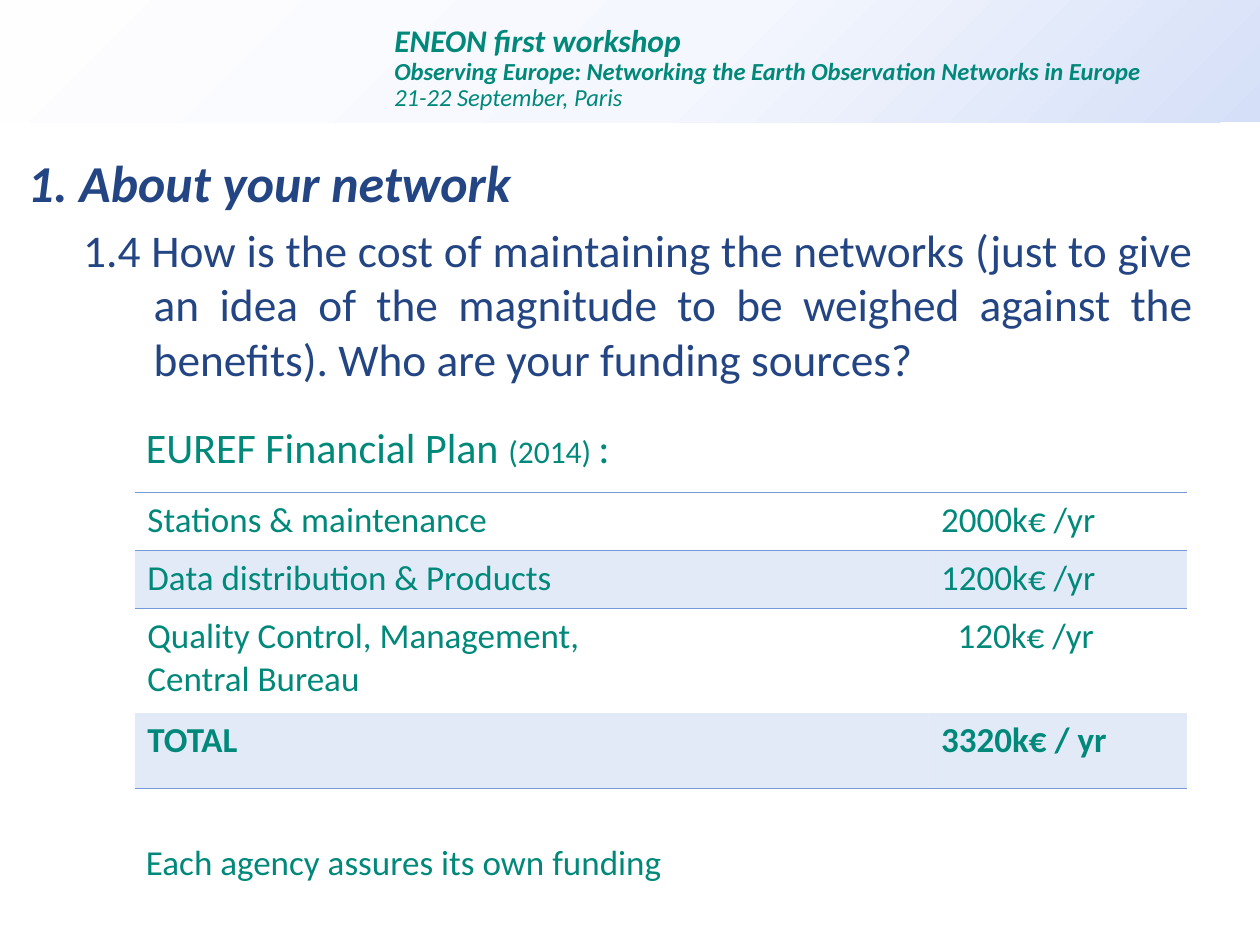
from dataclasses import dataclass

from lxml.etree import SubElement
from pptx import Presentation
from pptx.dml.color import RGBColor
from pptx.enum.shapes import MSO_SHAPE
from pptx.enum.text import MSO_ANCHOR, MSO_AUTO_SIZE, PP_ALIGN
from pptx.oxml import parse_xml
from pptx.oxml.ns import nsdecls, qn
from pptx.util import Inches, Pt

GREEN, NAVY, BLUE = "00897A", "244583", "7598D9"
NO_STYLE = "{2D5ABB26-0587-4C30-8999-92F81FD0307C}"
HEADER_STOPS = [(0, "FEFEFF"), (55, "F4F7FD"), (100, "D5DFF8")]


@dataclass
class Line:
    text: str
    size: float
    bold: bool = False
    italic: bool = False


@dataclass
class CostRow:
    label: str
    cost: str
    height: float
    banded: bool = False
    bold: bool = False
    indent: float = 0
    edges: tuple = ()


HEADER = [
    Line("ENEON first workshop", 18, True, True),
    Line("Observing Europe: Networking the Earth Observation Networks in Europe", 14, True, True),
    Line("21-22 September, Paris", 14, False, True),
]
QUESTION = [
    Line("1. About your network", 29.6, True, True),
    Line("1.4 How is the cost of maintaining the networks (just to give an idea of the "
         "magnitude to be weighed against the benefits). Who are your funding sources?", 25.9),
]
COSTS = [
    CostRow("Stations & maintenance", "2000k€ /yr", 0.46, edges=("lnT", "lnB")),
    CostRow("Data distribution & Products", "1200k€ /yr", 0.46, banded=True, edges=("lnT",)),
    CostRow("Quality Control, Management,\nCentral Bureau", "120k€ /yr", 0.83, indent=0.13),
    CostRow("TOTAL", "3320k€ / yr", 0.6, banded=True, bold=True, edges=("lnB",)),
]


def color(value: str) -> RGBColor:
    return RGBColor.from_string(value)


def style(font, size: float, value: str, bold: bool = False, italic: bool = False) -> None:
    font.name, font.size = "Calibri", Pt(size)
    font.bold, font.italic = bold, italic
    font.color.rgb = color(value)


def write_lines(frame, lines: list, value: str) -> list:
    frame.text = "\n".join(line.text for line in lines)
    for para, line in zip(frame.paragraphs, lines):
        style(para.font, line.size, value, line.bold, line.italic)
    return list(frame.paragraphs)


def add_header(page) -> None:
    band = page.shapes.add_shape(MSO_SHAPE.RECTANGLE, 0, 0, Inches(10), Inches(0.97))
    band.shadow.inherit = False
    band.line.fill.background()
    stops = "".join(f'<a:gs pos="{place * 1000}"><a:srgbClr val="{value}"/></a:gs>'
                    for place, value in HEADER_STOPS)
    gradient = parse_xml(
        f'<a:gradFill {nsdecls("a")} rotWithShape="1"><a:gsLst>{stops}</a:gsLst>'
        '<a:path path="circle"><a:fillToRect l="-40000" t="-90000" r="140000" b="190000"/>'
        '</a:path></a:gradFill>')
    band.element.spPr.find(qn("a:prstGeom")).addnext(gradient)
    frame = band.text_frame
    frame.vertical_anchor = MSO_ANCHOR.TOP
    frame.margin_left, frame.margin_top = Inches(3.13), Inches(0.26)
    frame.margin_bottom = 0
    for para in write_lines(frame, HEADER, GREEN):
        para.alignment = PP_ALIGN.LEFT
        para.line_spacing = Pt(15)


def fill_body(body) -> None:
    body.left, body.top = Inches(0.12), Inches(1.15)
    body.width, body.height = Inches(9.45), Inches(1.81)
    frame = body.text_frame
    frame.text = "\n".join(line.text for line in QUESTION)
    frame.auto_size = MSO_AUTO_SIZE.NONE
    for level, (para, margin) in enumerate(zip(frame.paragraphs, (0.56, 1))):
        para.level = level
        properties = para._p.get_or_add_pPr()
        properties.set("marL", str(Inches(margin)))
        properties.set("indent", str(Inches(-0.56)))
        para.space_before = Pt(5 * level)
        SubElement(properties, qn("a:buNone"))
    heading, question = write_lines_in_place(frame.paragraphs, QUESTION)
    heading.alignment, question.alignment = PP_ALIGN.LEFT, PP_ALIGN.JUSTIFY


def write_lines_in_place(paragraphs, lines: list) -> list:
    for para, line in zip(paragraphs, lines):
        style(para.font, line.size, NAVY, line.bold, line.italic)
    return list(paragraphs)


def add_note(page, top: float, width: float, spans: list):
    box = page.shapes.add_textbox(Inches(1.06), Inches(top), Inches(width), Inches(0.5))
    box.text_frame.word_wrap = True
    para = box.text_frame.paragraphs[0]
    for text, size in spans:
        span = para.add_run()
        span.text = text
        style(span.font, size, GREEN)
    return para


def format_cell(cell, text: str, row: CostRow) -> None:
    write_lines(cell.text_frame, [Line(part, 20, row.bold) for part in text.split("\n")], GREEN)
    properties = cell._tc.get_or_add_tcPr()
    for edge in row.edges:
        properties.append(parse_xml(
            f'<a:{edge} {nsdecls("a")} w="{Pt(1)}"><a:solidFill><a:srgbClr val="{BLUE}"/>'
            f'</a:solidFill></a:{edge}>'))
    if row.banded:
        cell.fill.solid()
        cell.fill.fore_color.rgb = color(BLUE)
        SubElement(properties.find(".//" + qn("a:solidFill") + "[last()]/../"
                                   + qn("a:solidFill") + "/" + qn("a:srgbClr"))
                   if not row.edges else properties.findall(qn("a:solidFill"))[0][0],
                   qn("a:alpha"), val="20000")
    else:
        cell.fill.background()


def add_costs(page) -> None:
    height = sum(row.height for row in COSTS)
    table = page.shapes.add_table(len(COSTS), 2, Inches(1.07), Inches(3.91),
                                  Inches(8.35), Inches(height)).table
    table.first_row = table.horz_banding = False
    table._tbl.tblPr.find(qn("a:tableStyleId")).text = NO_STYLE
    table.columns[0].width, table.columns[1].width = Inches(6.3), Inches(2.05)
    for index, row in enumerate(COSTS):
        table.rows[index].height = Inches(row.height)
        label, cost = table.cell(index, 0), table.cell(index, 1)
        format_cell(label, row.label, row)
        format_cell(cost, row.cost, row)
        cost.margin_left = Inches(0.1 + row.indent)


def main() -> None:
    """Build the network funding slide."""
    deck = Presentation()
    deck.slide_width, deck.slide_height = Inches(10), Inches(7.5)
    page = deck.slides.add_slide(deck.slide_layouts[1])
    title = page.shapes.title.element
    title.getparent().remove(title)
    add_header(page)
    fill_body(page.placeholders[1])
    add_note(page, 3.3, 8.82, [("EUREF Financial Plan ", 24), ("(2014) ", 18), (":", 24)])
    add_costs(page)
    closing = add_note(page, 6.66, 4.33, [("Each agency assures its own funding", 20)])
    closing.line_spacing = 0.9
    deck.save("out.pptx")


if __name__ == "__main__":
    main()
